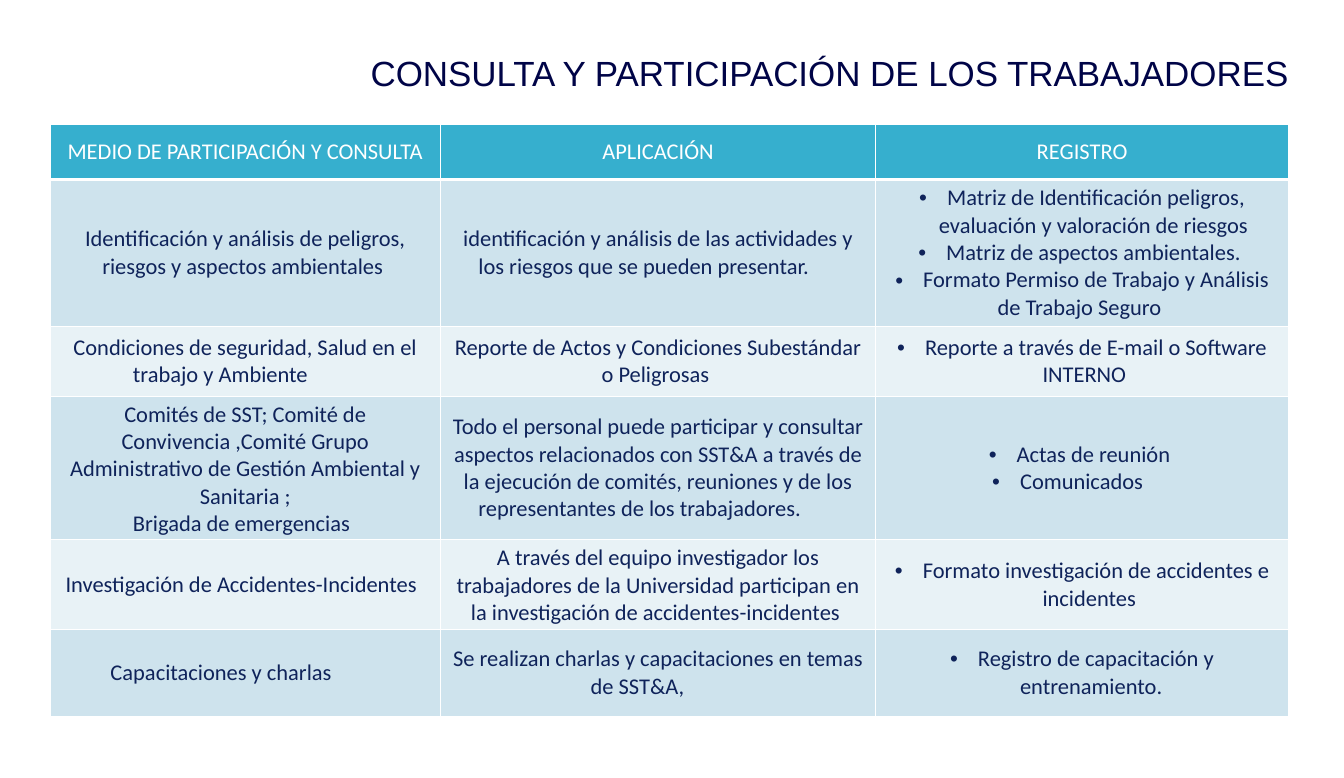
import pptx
import pptx.dml.color
import pptx.enum.text
import pptx.oxml
import pptx.oxml.ns
import pptx.util

Inches = pptx.util.Inches
Pt = pptx.util.Pt
PP_ALIGN = pptx.enum.text.PP_ALIGN
MIDDLE = pptx.enum.text.MSO_ANCHOR.MIDDLE

SLIDE_W, SLIDE_H = 14.96, 8.66
LEFT, CONTENT_W = 0.56, 13.78
COLUMNS = [4.34, 4.85, 4.59]
ROWS = [0.62, 1.63, 0.78, 1.54, 0.96, 0.96]
NAVY, INK, WHITE = "000447", "0F235A", "FFFFFF"
HEADER_FILL, BAND_FILLS = "36AFCE", ["CEE3ED", "E8F2F6"]
BULLET_INDENT = 0.31

TITLE = "CONSULTA Y PARTICIPACIÓN DE LOS TRABAJADORES"
HEADERS = ["MEDIO DE PARTICIPACIÓN Y CONSULTA", "APLICACIÓN", "REGISTRO"]
# Each row: medium, application, records; every cell is a list of paragraphs
BODY = [
    [["Identificación y análisis de peligros, riesgos y aspectos ambientales "],
     ["identificación y análisis de las actividades y los riesgos "
      "que se pueden presentar. \t"],
     ["Matriz de Identificación peligros, evaluación y valoración de riesgos ",
      "Matriz de aspectos ambientales. ",
      "Formato Permiso de Trabajo y Análisis de Trabajo Seguro \t"]],
    [["Condiciones de seguridad, Salud en el trabajo y Ambiente \t"],
     ["Reporte de Actos y Condiciones Subestándar o Peligrosas "],
     ["Reporte a través de E-mail o Software INTERNO \t"]],
    [["Comités de SST; Comité de Convivencia ,Comité Grupo Administrativo "
      "de Gestión Ambiental y Sanitaria ;",
      "Brigada de emergencias \t"],
     ["Todo el personal puede participar y consultar aspectos relacionados "
      "con SST&A a través de la ejecución de comités, reuniones y de los "
      "representantes de los trabajadores. \t"],
     ["Actas de reunión ", "Comunicados \t"]],
    [["Investigación de Accidentes-Incidentes \t"],
     ["A través del equipo investigador los trabajadores de la Universidad "
      "participan en la investigación de accidentes-incidentes "],
     ["Formato investigación de accidentes e incidentes \t"]],
    [["Capacitaciones y charlas \t"],
     ["Se realizan charlas y capacitaciones en temas de SST&A, \t"],
     ["Registro de capacitación y entrenamiento. \t"]],
]


def rgb(value):
    return pptx.dml.color.RGBColor.from_string(value)


def add_run(p, text, font, size, color):
    r = p.add_run()
    r.text = text
    r.font.name = font
    r.font.size = Pt(size)
    r.font.bold = False
    r.font.color.rgb = rgb(color)


def add_bullet(p):
    pPr = p._p.get_or_add_pPr()
    indent = Inches(BULLET_INDENT)
    pPr.set("marL", str(indent))
    pPr.set("indent", str(-indent))
    ns = pptx.oxml.ns.nsdecls("a")
    pPr.append(pptx.oxml.parse_xml(f'<a:buFont {ns} typeface="Arial"/>'))
    pPr.append(pptx.oxml.parse_xml(f'<a:buChar {ns} char="•"/>'))


def set_borders(cell, bottom):
    tcPr = cell._tc.get_or_add_tcPr()
    ns = pptx.oxml.ns.nsdecls("a")
    for side, width in zip("LRTB", [1, 1, 1, bottom]):
        tcPr.append(pptx.oxml.parse_xml(
            f'<a:ln{side} {ns} w="{Pt(width)}"><a:solidFill>'
            f'<a:srgbClr val="{WHITE}"/></a:solidFill></a:ln{side}>'))


def fill_cell(cell, paragraphs, fill, color, bulleted=False, bottom=1):
    set_borders(cell, bottom)
    cell.fill.solid()
    cell.fill.fore_color.rgb = rgb(fill)
    cell.vertical_anchor = MIDDLE
    tf = cell.text_frame
    for i, text in enumerate(paragraphs):
        p = tf.add_paragraph() if i else tf.paragraphs[0]
        p.alignment = PP_ALIGN.CENTER
        if bulleted:
            add_bullet(p)
        add_run(p, text, "Calibri", 18, color)


def place_title(slide, x, y, w, h):
    sp = slide.shapes.title
    sp.left, sp.top, sp.width, sp.height = map(Inches, (x, y, w, h))
    tf = sp.text_frame
    tf.margin_left = tf.margin_top = tf.margin_right = tf.margin_bottom = 0
    tf.word_wrap = True
    tf.auto_size = pptx.enum.text.MSO_AUTO_SIZE.SHAPE_TO_FIT_TEXT
    tf.vertical_anchor = MIDDLE
    p = tf.paragraphs[0]
    p.alignment = PP_ALIGN.RIGHT
    p.line_spacing = Pt(32)
    add_run(p, TITLE, "Arial", 28, NAVY)


def place_table(slide, x, y, w):
    table = slide.shapes.add_table(
        len(ROWS), len(COLUMNS), Inches(x), Inches(y),
        Inches(w), Inches(sum(ROWS))).table
    for column, width in zip(table.columns, COLUMNS):
        column.width = Inches(w * width / sum(COLUMNS))
    for row, height in zip(table.rows, ROWS):
        row.height = Inches(height)
    # Header row
    for c, text in enumerate(HEADERS):
        fill_cell(table.cell(0, c), [text], HEADER_FILL, WHITE, bottom=3)
    # Banded body rows, with bullets in the last column
    for r, cells in enumerate(BODY):
        for c, paragraphs in enumerate(cells):
            fill_cell(table.cell(r + 1, c), paragraphs, BAND_FILLS[r % 2],
                      INK, bulleted=c == len(COLUMNS) - 1)


def main():
    prs = pptx.Presentation()
    prs.slide_width, prs.slide_height = Inches(SLIDE_W), Inches(SLIDE_H)
    slide = prs.slides.add_slide(prs.slide_layouts[5])
    slide.background.fill.solid()
    slide.background.fill.fore_color.rgb = rgb(WHITE)
    title_w = 12.29
    place_title(slide, LEFT + CONTENT_W - title_w, 0.59, title_w, 0.45)
    place_table(slide, LEFT, 1.38, CONTENT_W)
    prs.save("out.pptx")


if __name__ == "__main__":
    main()
